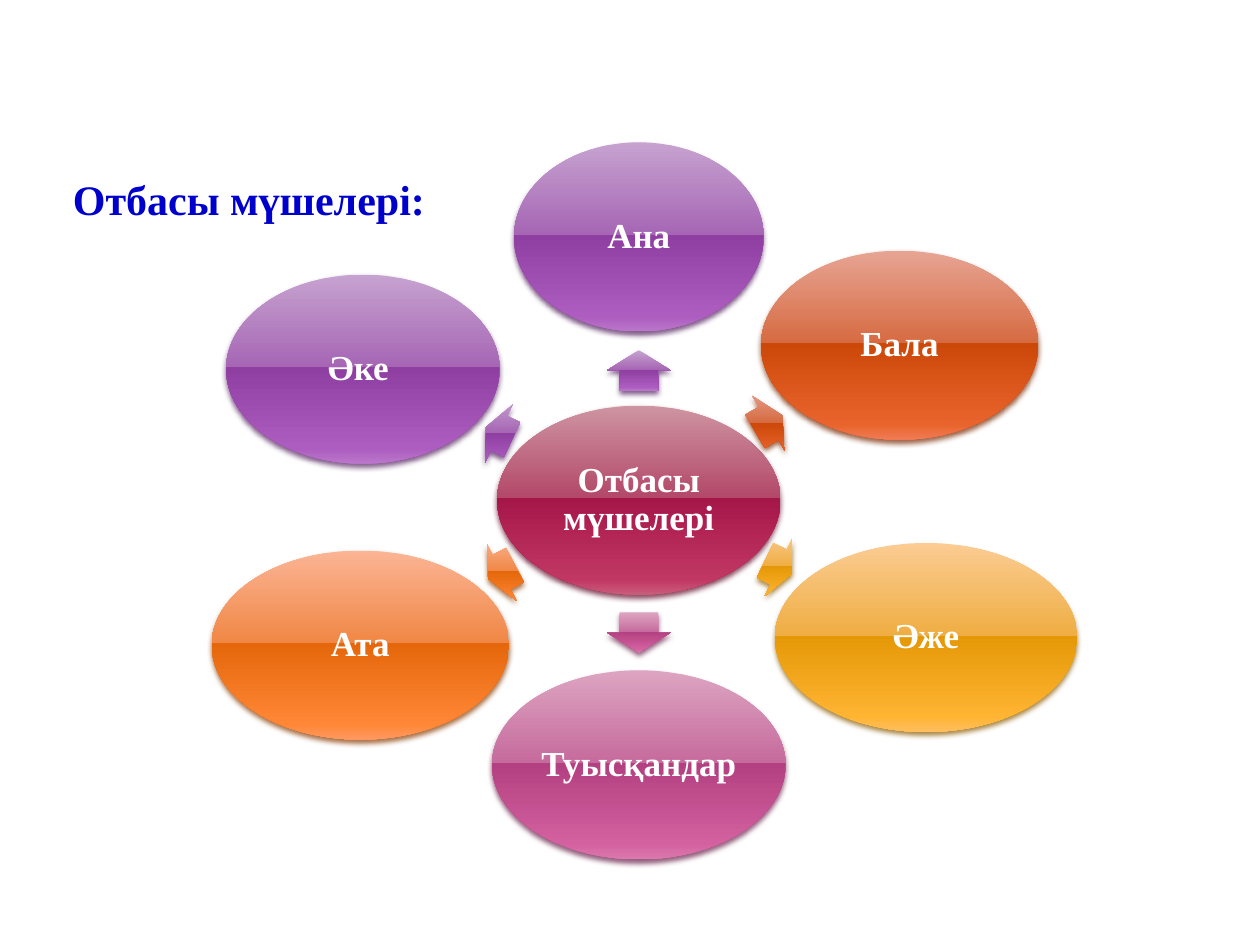
from dataclasses import dataclass

from lxml.etree import SubElement
from pptx import Presentation
from pptx.dml.color import RGBColor
from pptx.enum.shapes import MSO_SHAPE
from pptx.enum.text import MSO_ANCHOR, PP_ALIGN
from pptx.oxml.ns import qn
from pptx.shapes.autoshape import Shape
from pptx.slide import Slide
from pptx.text.text import _Paragraph as Paragraph
from pptx.util import Inches, Pt

FONT = "Times New Roman"
WHITE = RGBColor(0xFF, 0xFF, 0xFF)
BLUE = RGBColor(0x00, 0x00, 0xCC)
STOPS = (0, 49, 49, 92, 100)  # glossy gradient, percent
OVAL_HEIGHT = 1.5
ARROW_HEIGHT = 0.51


@dataclass(frozen=True)
class Gloss:
    colors: tuple[RGBColor, ...]
    shadow: RGBColor


def gloss(colors: str, shadow: str) -> Gloss:
    return Gloss(tuple(map(RGBColor.from_string, colors.split())),
                 RGBColor.from_string(shadow))


CRIMSON = gloss("CE94A2 B34869 A61749 C13764 CA5D7C", "722640")
PURPLE = gloss("C6A2D0 A666B4 8F3EA1 AD5DBF BA76CA", "6A3F73")
RED = gloss("E7A493 D66B42 CC4809 E9642C F07B55", "894321")
YELLOW = gloss("FBCC93 EFAE43 E59807 FFB432 FFBE5F", "9A7023")
PINK = gloss("DDA4C1 C66B9D B34181 D361A0 DC79AE", "804365")
ORANGE = gloss("FBB494 F08745 E5670B FF8736 FF9961", "9A5726")


@dataclass(frozen=True)
class Oval:
    label: str
    look: Gloss
    center: tuple[float, float]
    width: float


@dataclass(frozen=True)
class Arrow:
    center: tuple[float, float]
    length: float
    rotation: float


HUB = Oval("Отбасы мүшелері", CRIMSON, (5.07, 3.97), 2.25)
MEMBERS = (
    (Arrow((5.07, 2.94), 0.32, 270), Oval("Ана", PURPLE, (5.07, 1.88), 1.98)),
    (Arrow((6.1, 3.36), 0.25, 329.2), Oval("Бала", RED, (7.14, 2.74), 2.2)),
    (Arrow((6.18, 4.5), 0.24, 25.4), Oval("Әже", YELLOW, (7.35, 5.06), 2.4)),
    (Arrow((5.07, 5.02), 0.32, 90), Oval("Туысқандар", PINK, (5.07, 6.07), 2.33)),
    (Arrow((3.98, 4.54), 0.24, 152.5), Oval("Ата", ORANGE, (2.86, 5.12), 2.36)),
    (Arrow((3.96, 3.44), 0.23, 205.5), Oval("Әке ", PURPLE, (2.88, 2.93), 2.17)),
)


def add_color(parent, color: RGBColor):
    return SubElement(parent, qn("a:srgbClr"), val=str(color))


def add_glossy(slide: Slide, kind: MSO_SHAPE, center: tuple[float, float],
               width: float, height: float, look: Gloss) -> Shape:
    """Add a shape by its centre, with gradient fill and soft shadow."""
    shape = slide.shapes.add_shape(
        kind, Inches(center[0] - width / 2), Inches(center[1] - height / 2),
        Inches(width), Inches(height))
    shape.line.fill.background()
    shape.shadow.inherit = False
    shape.fill.gradient()
    properties = shape._element.spPr

    # Gradient runs down the slide even when the shape is turned
    gradient = properties.find(qn("a:gradFill"))
    gradient.set("rotWithShape", "0")
    for child in list(gradient):
        gradient.remove(child)
    stops = SubElement(gradient, qn("a:gsLst"))
    for position, color in zip(STOPS, look.colors):
        add_color(SubElement(stops, qn("a:gs"), pos=str(position * 1000)), color)
    SubElement(gradient, qn("a:lin"), ang="5400000", scaled="0")

    # Shadow falls straight down
    shadow = SubElement(
        properties.find(qn("a:effectLst")), qn("a:outerShdw"),
        blurRad=str(Pt(3.1)), dist=str(Pt(2)), dir="5400000", rotWithShape="0")
    SubElement(add_color(shadow, look.shadow), qn("a:alpha"), val="83000")
    return shape


def format_text(para: Paragraph, size: int, color: RGBColor) -> None:
    for span in para.runs:
        span.font.name = FONT
        span.font.size = Pt(size)
        span.font.bold = True
        span.font.color.rgb = color


def draw_oval(slide: Slide, oval: Oval) -> None:
    shape = add_glossy(slide, MSO_SHAPE.OVAL, oval.center, oval.width,
                       OVAL_HEIGHT, oval.look)
    frame = shape.text_frame
    frame.word_wrap = True
    frame.vertical_anchor = MSO_ANCHOR.MIDDLE
    frame.margin_left = frame.margin_right = Inches(0.03)
    frame.margin_top = frame.margin_bottom = Inches(0.03)
    frame.text = oval.label
    para = frame.paragraphs[0]
    para.alignment = PP_ALIGN.CENTER
    para.line_spacing = 0.9
    para.space_after = Pt(7)
    format_text(para, 20, WHITE)


def draw_arrow(slide: Slide, arrow: Arrow, look: Gloss) -> None:
    shape = add_glossy(slide, MSO_SHAPE.RIGHT_ARROW, arrow.center,
                       arrow.length, ARROW_HEIGHT, look)
    shape.adjustments[0] = 0.6
    shape.adjustments[1] = 0.5
    shape.rotation = arrow.rotation


def draw_title(slide: Slide, text: str) -> None:
    box = slide.shapes.add_textbox(Inches(0.48), Inches(1.33),
                                   Inches(3.02), Inches(0.5))
    box.text_frame.word_wrap = False
    box.text_frame.text = text
    format_text(box.text_frame.paragraphs[0], 24, BLUE)


def main() -> None:
    deck = Presentation()
    deck.slide_width, deck.slide_height = Inches(10), Inches(7.5)
    page = deck.slides.add_slide(deck.slide_layouts[6])

    # Radial family diagram
    draw_oval(page, HUB)
    for arrow, oval in MEMBERS:
        draw_arrow(page, arrow, oval.look)
        draw_oval(page, oval)

    # Heading
    draw_title(page, "Отбасы мүшелері:")
    deck.save("out.pptx")


if __name__ == "__main__":
    main()
